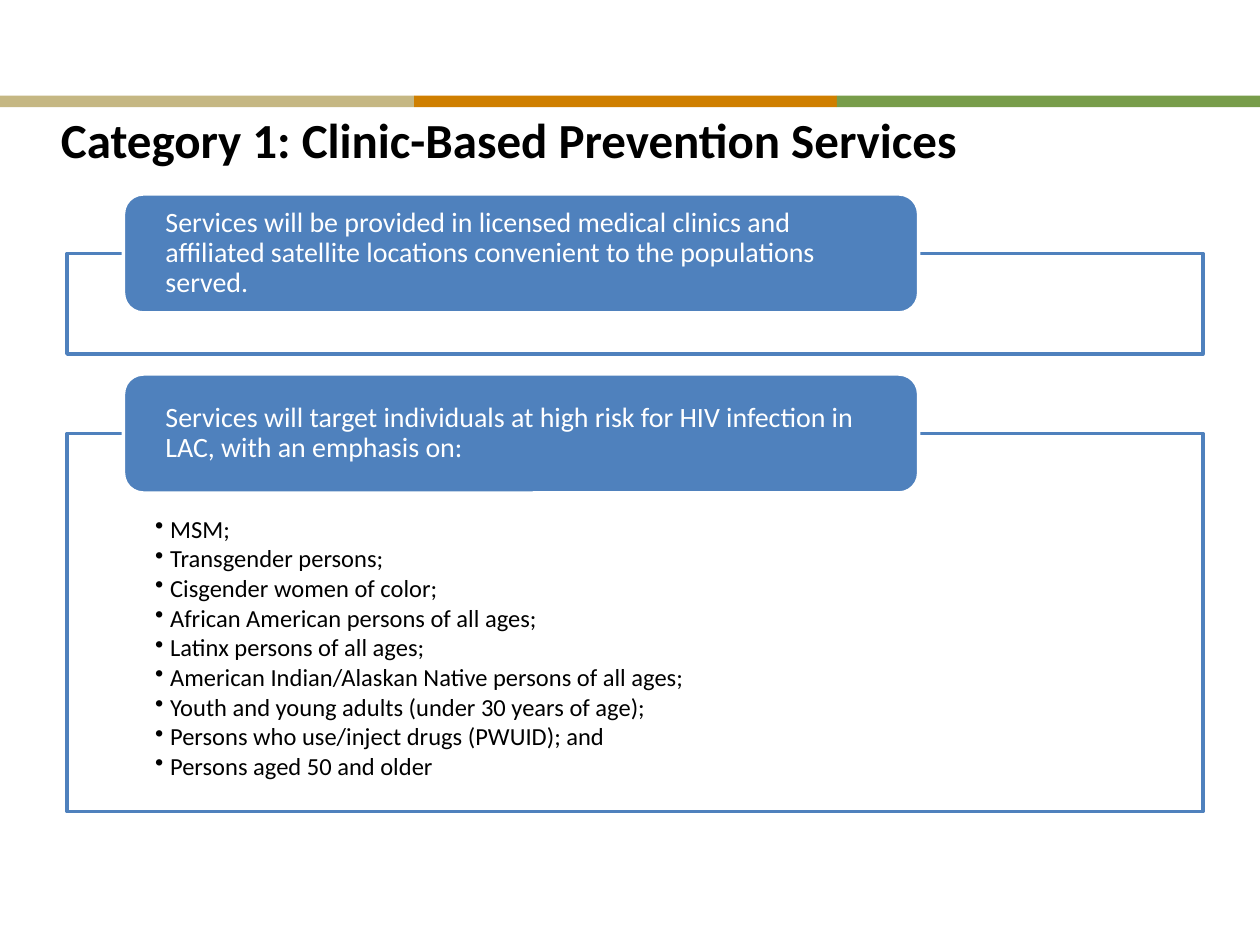
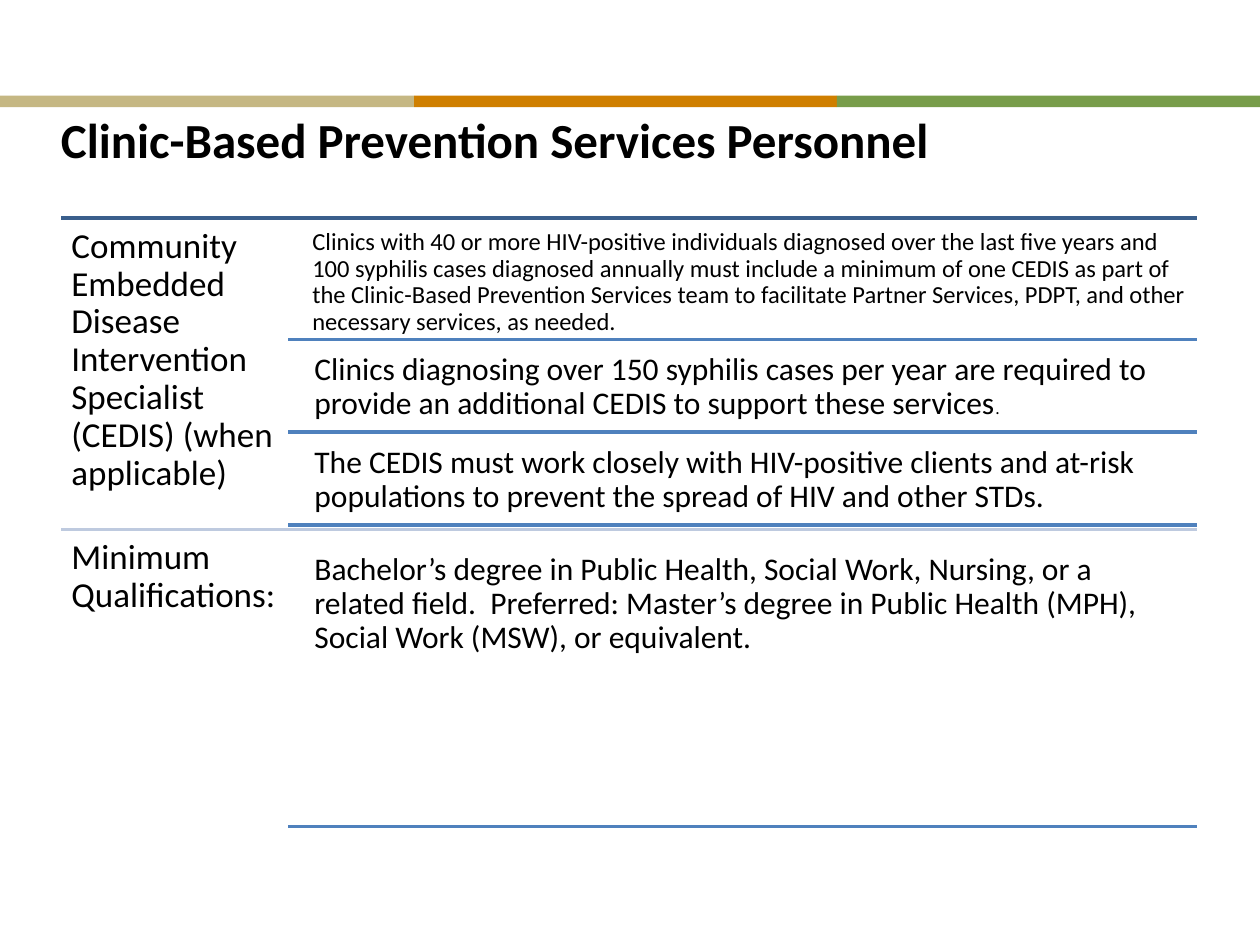
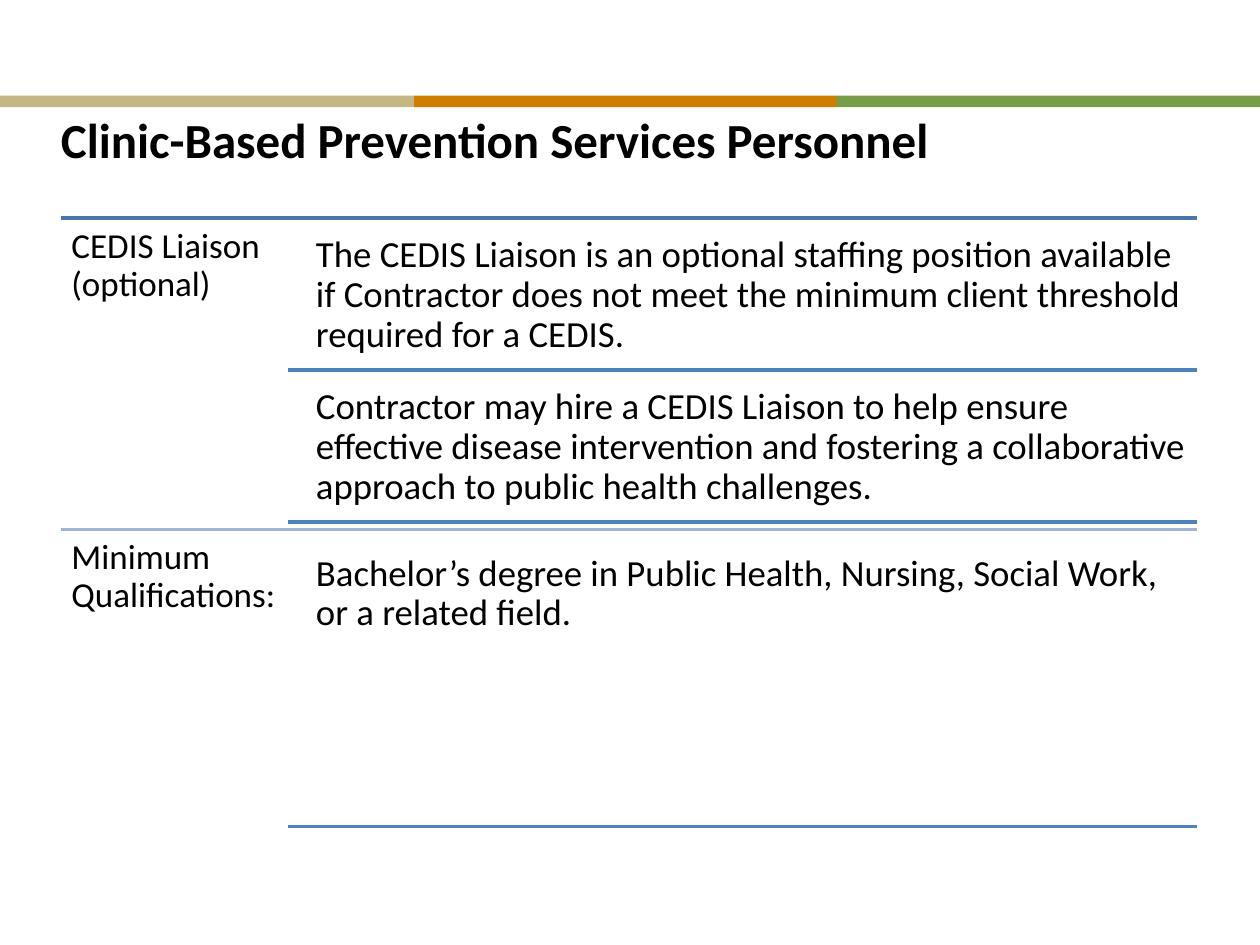
"""Build three slides on clinic-based prevention services."""
from lxml import etree
from pptx import Presentation
from pptx.dml.color import RGBColor
from pptx.enum.shapes import MSO_CONNECTOR, MSO_SHAPE
from pptx.enum.text import MSO_ANCHOR, PP_ALIGN
from pptx.oxml.ns import qn
from pptx.util import Cm, Pt

RECT, ROUND = MSO_SHAPE.RECTANGLE, MSO_SHAPE.ROUNDED_RECTANGLE
STRAIGHT = MSO_CONNECTOR.STRAIGHT
TOP, MIDDLE = MSO_ANCHOR.TOP, MSO_ANCHOR.MIDDLE
LEFT = PP_ALIGN.LEFT

HUES = {
    "tan": "C5B783", "orange": "CF7F00", "green": "789D4A",
    "blue": "4F81BD", "navy": "3A5F8C", "steel": "4875AC",
    "pale": "BECADF", "mist": "A2B4D4",
    "white": "FFFFFF", "black": "000000",
}
FONT = "Calibri"
WIDE, HIGH = 25.4, 19.05
EDGE, SPLIT, INDENT, END = 1.23, 5.81, 6.15, 24.13
START, BLOCK = 4.39, 6.28
GAP = 0.05

GROUPS = [
    "MSM;",
    "Transgender persons;",
    "Cisgender women of color;",
    "African American persons of all ages;",
    "Latinx persons of all ages;",
    "American Indian/Alaskan Native persons of all ages;",
    "Youth and young adults (under 30 years of age);",
    "Persons who use/inject drugs (PWUID); and",
    "Persons aged 50 and older",
]
PANELS = [
    (2.03, "Services will be provided in licensed medical clinics and affiliated "
           "satellite locations convenient to the populations served.", []),
    (7.62, "Services will target individuals at high risk for HIV infection in "
           "LAC, with an emphasis on:", GROUPS),
]
STAFF = "Clinic-Based Prevention Services Personnel"
NEEDS = "Minimum Qualifications:"
CEDIS = [
    ("navy", "Community Embedded Disease Intervention Specialist (CEDIS) "
             "(when applicable)", [
        (1.33, [("Clinics with 40 or more HIV-positive individuals diagnosed over "
                 "the last five years and 100 syphilis cases diagnosed annually must "
                 "include a minimum of one CEDIS as part of the Clinic-Based "
                 "Prevention Services team to facilitate Partner Services, PDPT, and "
                 "other necessary services, as needed.", 14)]),
        (1, [("Clinics diagnosing over 150 syphilis cases per year are required to "
              "provide an additional CEDIS to support these services", 18),
             (".", 10)]),
        (1, [("The CEDIS must work closely with HIV-positive clients and at-risk "
              "populations to prevent the spread of HIV and other STDs.", 18)]),
    ]),
    ("pale", NEEDS, [
        (1, [("Bachelor’s degree in Public Health, Social Work, Nursing, or a "
              "related field.  Preferred: Master’s degree in Public Health (MPH), "
              "Social Work (MSW), or equivalent.", 18)]),
    ]),
]
LIAISON = [
    ("steel", "CEDIS Liaison (optional)", [
        (1, [("The CEDIS Liaison is an optional staffing position available if "
              "Contractor does not meet the minimum client threshold required for "
              "a CEDIS.", 21)]),
        (1, [("Contractor may hire a CEDIS Liaison to help ensure effective disease "
              "intervention and fostering a collaborative approach to public health "
              "challenges.", 21)]),
    ]),
    ("mist", NEEDS, [
        (1, [("Bachelor’s degree in Public Health, Nursing, Social Work, or a "
              "related field.", 21)]),
    ]),
]


def paint(name):
    """Return the colour with this name."""
    return RGBColor.from_string(HUES[name])


def style(item, looks):
    """Set each format value on the item."""
    for key, value in looks.items():
        setattr(item, key, value)


def write(shape, lines, pads, hue="black", anchor=TOP, bold=False, space=0.9,
          after=0, dots=False):
    """Fill a shape with lines, each a list of (words, size) runs."""
    frame = shape.text_frame
    left, top, right, foot = (Cm(pad) for pad in pads)
    style(frame, {"word_wrap": True, "vertical_anchor": anchor,
                  "margin_left": left, "margin_top": top,
                  "margin_right": right, "margin_bottom": foot})
    for num, line in enumerate(lines):
        para = frame.add_paragraph() if num else frame.paragraphs[0]
        if dots:
            add_dot(para)
        style(para, {"alignment": LEFT, "line_spacing": space,
                     "space_after": Pt(after)})
        for words, size in line:
            run = para.add_run()
            run.text = words
            style(run.font, {"name": FONT, "size": Pt(size), "bold": bold})
            run.font.color.rgb = paint(hue)


def add_dot(para):
    """Give the paragraph a hanging bullet."""
    props = para._p.get_or_add_pPr()
    props.set("marL", str(Cm(0.3)))
    props.set("indent", str(Cm(-0.3)))
    etree.SubElement(props, qn("a:buChar"), char="•")


def add_box(slide, kind, place, fill, line=None):
    """Add a filled preset shape, with an outline if one is named."""
    box = slide.shapes.add_shape(kind, *(Cm(side) for side in place))
    box.shadow.inherit = False
    box.fill.solid()
    box.fill.fore_color.rgb = paint(fill)
    if line:
        box.line.color.rgb = paint(line)
        box.line.width = Pt(2)
    else:
        box.line.fill.background()
    return box


def add_text(slide, place, lines, pads, **looks):
    """Add a text box."""
    box = slide.shapes.add_textbox(*(Cm(side) for side in place))
    write(box, lines, pads, **looks)


def add_rule(slide, left, top, hue):
    """Draw a level line from left to the right edge of the text."""
    rule = slide.shapes.add_connector(STRAIGHT, Cm(left), Cm(top), Cm(END), Cm(top))
    rule.line.color.rgb = paint(hue)
    rule.line.width = Pt(2)
    etree.SubElement(rule._element.spPr, qn("a:effectLst"))


def add_page(deck, title):
    """Add a slide with the colour band and its title."""
    slide = deck.slides.add_slide(deck.slide_layouts[6])
    stops = [0, 8.35, 16.87, WIDE]
    for hue, left, right in zip(["tan", "orange", "green"], stops, stops[1:]):
        add_box(slide, RECT, (left, 1.93, right - left, 0.23), hue)
    add_text(slide, (EDGE, 2.21, 22.93, 2.1), [[(title, 28)]], [0] * 4,
             bold=True, space=1.0)
    return slide


def add_panel(slide, top, high, head, items):
    """Add an outlined panel with a heading tab across its top edge."""
    panel = add_box(slide, RECT, (1.35, top, 22.9, high), "white", "blue")
    tint = panel._element.spPr.find(qn("a:solidFill"))[0]
    etree.SubElement(tint, qn("a:alpha"), val="90000")
    if items:
        write(panel, [[(item, 14)] for item in items], (1.78, 1.68, 1.78, 0.28),
              after=1.8, dots=True)
    tab = add_box(slide, ROUND, (2.49, top - 1.2, 16.03, 2.4), "blue", "white")
    write(tab, [[(head, 16)]], (0.73, 0, 0.73, 0), hue="white", anchor=MIDDLE)


def add_block(slide, top, hue, label, rows):
    """Add a label with its ruled rows, shared out by weight."""
    add_rule(slide, EDGE, top, hue)
    add_text(slide, (EDGE, top, SPLIT - EDGE, BLOCK), [[(label, 20)]], [0.21] * 4)
    unit = BLOCK / (sum(row[0] for row in rows) + GAP * (len(rows) + 1))
    for weight, runs in rows:
        top += GAP * unit
        high = weight * unit
        pad = runs[0][1] / 95
        add_text(slide, (INDENT, top, END - INDENT, high), [runs], [pad] * 4)
        top += high
        add_rule(slide, SPLIT, top, "blue")


def main():
    """Build and save the deck."""
    deck = Presentation()
    style(deck, {"slide_width": Cm(WIDE), "slide_height": Cm(HIGH)})
    slide = add_page(deck, "Category 1: Clinic-Based Prevention Services")
    top = 5.11
    for high, head, items in PANELS:
        add_panel(slide, top, high, head, items)
        top += high + 1.6
    for blocks in (CEDIS, LIAISON):
        slide = add_page(deck, STAFF)
        for num, block in enumerate(blocks):
            add_block(slide, START + num * BLOCK, *block)
    deck.save("out.pptx")


if __name__ == "__main__":
    main()
